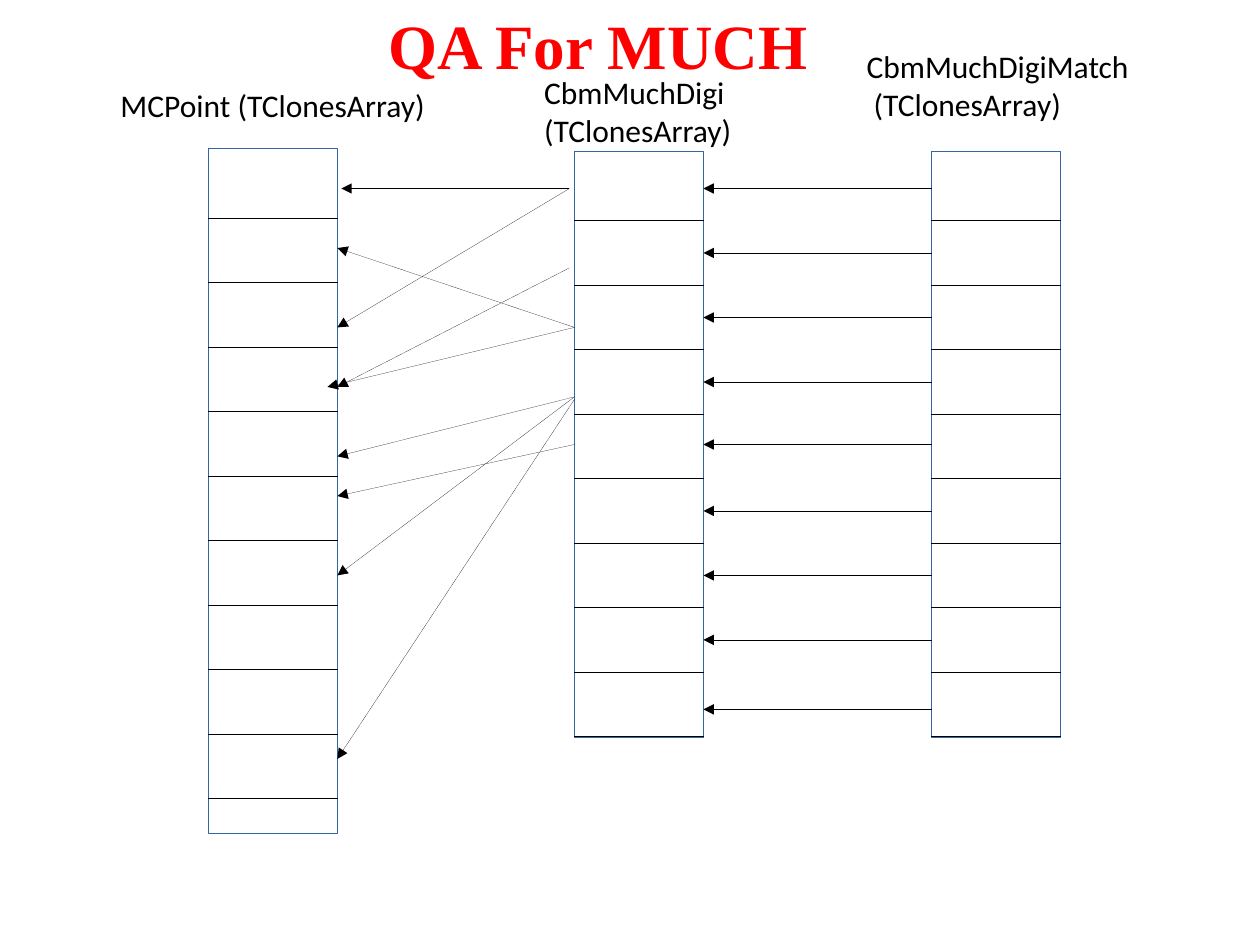
from lxml import etree
from pptx import Presentation
from pptx.dml.color import RGBColor
from pptx.enum.shapes import MSO_CONNECTOR, MSO_SHAPE
from pptx.enum.text import PP_ALIGN
from pptx.oxml.ns import qn
from pptx.util import Cm, Pt

RECTANGLE = MSO_SHAPE.RECTANGLE
STRAIGHT = MSO_CONNECTOR.STRAIGHT
LEFT, CENTER = PP_ALIGN.LEFT, PP_ALIGN.CENTER

BLACK, BLUE, RED = "000000", "3465A4", "FF0000"
LEFT_SIDE, RIGHT_SIDE = 1, 3
COLUMN_WIDTH = 2.6
ROW_HEIGHT = 1.3
FIRST_ROW_HEIGHT = 1.4
POINT_LEFT, DIGI_LEFT, MATCH_LEFT = 4.2, 11.58, 18.78
POINT_RIGHT = POINT_LEFT + COLUMN_WIDTH
DIGI_RIGHT = DIGI_LEFT + COLUMN_WIDTH
MIDDLE_ROW = 4

# Text, left, top, width, height
LABELS = [
    (["MCPoint (TClonesArray)"], 2.18, 1.6, 6.8, 1.02),
    (["CbmMuchDigi", "(TClonesArray)"], 10.72, 1.35, 4.35, 1.78),
    (["CbmMuchDigiMatch", " (TClonesArray)"], 17.22, 0.82, 5.85, 1.78),
]

MATCH_ROWS = [3.8 + row * ROW_HEIGHT for row in range(8)] + [14.3]

# Start x, start y, end x, end y
DIGI_TO_POINT = [
    (11.48, 3.8, 6.88, 3.8),
    (11.48, 3.8, POINT_RIGHT, 6.6),
    (11.48, 5.4, POINT_RIGHT, 7.8),
    (DIGI_LEFT, 6.6, POINT_RIGHT, 5.0),
    (DIGI_LEFT, 6.6, 6.6, 7.8),
    (DIGI_LEFT, 8.0, POINT_RIGHT, 9.2),
    (DIGI_LEFT, 8.0, POINT_RIGHT, 11.6),
    (DIGI_LEFT, 8.05, POINT_RIGHT, 15.3),
]


def rgb(color):
    return RGBColor.from_string(color)


def add_text(slide, lines, left, top, width, height,
             font="Calibri", size=18, color=BLACK, bold=False, align=LEFT):
    box = slide.shapes.add_textbox(Cm(left), Cm(top), Cm(width), Cm(height))
    tf = box.text_frame
    tf.word_wrap = False
    tf.text = "\n".join(lines)
    for p in tf.paragraphs:
        p.alignment = align
        p.font.name = font
        p.font.size = Pt(size)
        p.font.bold = bold
        p.font.color.rgb = rgb(color)


def add_line(slide, x1, y1, x2, y2):
    """Draw a line of default width, free of the theme's line style."""
    line = slide.shapes.add_connector(STRAIGHT, Cm(x1), Cm(y1), Cm(x2), Cm(y2))
    line.line.color.rgb = rgb(BLACK)
    etree.SubElement(line._element.spPr, qn("a:effectLst"))
    line._element.remove(line._element.find(qn("p:style")))
    return line


def add_arrow(slide, x1, y1, x2, y2):
    arrow = add_line(slide, x1, y1, x2, y2)
    etree.SubElement(arrow.line._get_or_add_ln(), qn("a:tailEnd"), type="triangle")
    return arrow


def add_array(slide, left, top, height, dividers):
    """Draw a column of cells and return its outline."""
    sp = slide.shapes.add_shape(RECTANGLE, Cm(left), Cm(top), Cm(COLUMN_WIDTH), Cm(height))
    sp.shadow.inherit = False
    sp.fill.background()
    sp.line.color.rgb = rgb(BLUE)
    sp.line.width = Pt(0.75)
    for row in range(dividers):
        y = top + FIRST_ROW_HEIGHT + row * ROW_HEIGHT
        add_line(slide, left, y, left + COLUMN_WIDTH, y)
    return sp


def main():
    prs = Presentation()
    prs.slide_width, prs.slide_height = Cm(25.4), Cm(19.05)
    slide = prs.slides.add_slide(prs.slide_layouts[6])

    add_text(slide, ["QA For MUCH"], 7.46, 0, 9.2, 1.78,
             font="Times New Roman", size=36, color=RED, bold=True, align=CENTER)
    add_array(slide, POINT_LEFT, 3, 13.8, 10)
    digis = add_array(slide, DIGI_LEFT, 3.05, 11.82, 9)
    matches = add_array(slide, MATCH_LEFT, 3.05, 11.82, 9)
    for label in LABELS:
        add_text(slide, *label)

    match_arrows = [add_arrow(slide, MATCH_LEFT, y, DIGI_RIGHT, y) for y in MATCH_ROWS]
    match_arrows[MIDDLE_ROW].begin_connect(matches, LEFT_SIDE)
    match_arrows[MIDDLE_ROW].end_connect(digis, RIGHT_SIDE)

    for ends in DIGI_TO_POINT:
        add_arrow(slide, *ends)
    middle_arrow = add_arrow(slide, DIGI_LEFT, 9, POINT_RIGHT, 10)
    middle_arrow.begin_connect(digis, LEFT_SIDE)

    prs.save("out.pptx")


if __name__ == "__main__":
    main()
